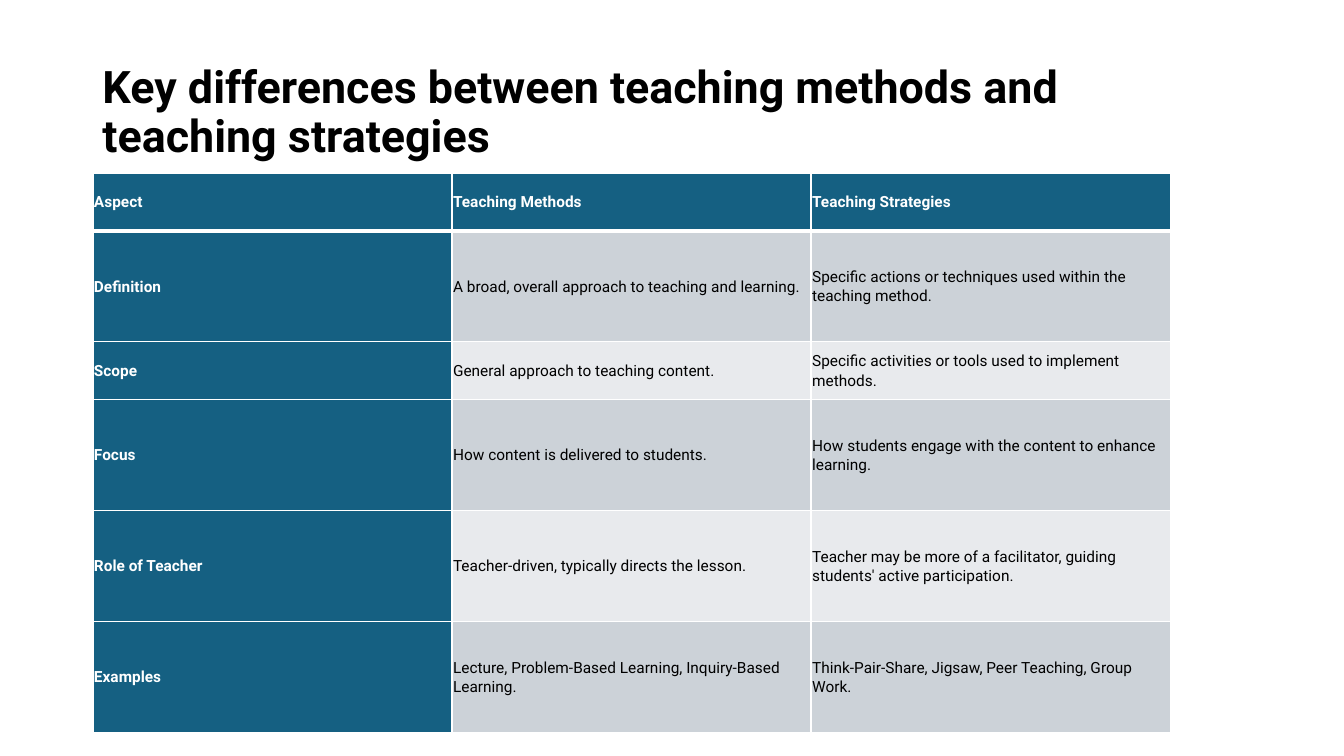
from dataclasses import dataclass

from lxml import etree
from pptx import Presentation
from pptx.dml.color import RGBColor
from pptx.enum import text
from pptx.oxml import ns
from pptx.util import Pt


@dataclass(frozen=True)
class Theme:
    font: str = "Roboto"
    ink: str = "000000"
    paper: str = "FFFFFF"
    accent: str = "156082"
    bands: tuple = ("CCD2D8", "E8EAED")
    title_size: float = 32
    cell_size: float = 11


THEME = Theme()

TITLE = "Key differences between teaching methods and teaching strategies"
COMPARISON = [
    ("Aspect", "Teaching Methods", "Teaching Strategies"),
    ("Definition",
     "A broad, overall approach to teaching and learning.",
     "Specific actions or techniques used within the teaching method."),
    ("Scope",
     "General approach to teaching content.",
     "Specific activities or tools used to implement methods."),
    ("Focus",
     "How content is delivered to students.",
     "How students engage with the content to enhance learning."),
    ("Role of Teacher",
     "Teacher-driven, typically directs the lesson.",
     "Teacher may be more of a facilitator, guiding students' active participation."),
    ("Examples",
     "Lecture, Problem-Based Learning, Inquiry-Based Learning.",
     "Think-Pair-Share, Jigsaw, Peer Teaching, Group Work."),
]
ROW_WEIGHTS = (0.57, 1.1, 0.57, 1.1, 1.1, 1.1)


def write(frame, words, *, size, color, bold=False, line_spacing=1.0, space_after=0):
    paragraph = frame.paragraphs[0]
    paragraph.alignment = text.PP_ALIGN.LEFT
    paragraph.line_spacing = line_spacing
    paragraph.space_before = Pt(0)
    paragraph.space_after = Pt(space_after)
    run = paragraph.add_run()
    run.text = words
    run.font.name = THEME.font
    run.font.size = Pt(size)
    run.font.bold = bold
    run.font.color.rgb = RGBColor.from_string(color)


def set_borders(cell, **widths):
    """Draw the sides L, R, T and B in the given widths; call before filling the cell."""
    properties = cell._tc.get_or_add_tcPr()
    for side, width in widths.items():
        line = etree.SubElement(properties, ns.qn(f"a:ln{side}"), w=str(Pt(width)))
        fill = etree.SubElement(line, ns.qn("a:solidFill"))
        etree.SubElement(fill, ns.qn("a:srgbClr"), val=THEME.paper)


def add_title(slide, left, top, width, height):
    title = slide.shapes.title
    title.left, title.top, title.width, title.height = map(Pt, (left, top, width, height))
    frame = title.text_frame
    frame.word_wrap = True
    frame.auto_size = text.MSO_AUTO_SIZE.NONE
    frame.vertical_anchor = text.MSO_ANCHOR.MIDDLE
    write(frame, TITLE, size=THEME.title_size, color=THEME.ink, bold=True, line_spacing=0.9)


def add_comparison(slide, left, top, width, height):
    columns = len(COMPARISON[0])
    table = slide.shapes.add_table(
        len(COMPARISON), columns, *map(Pt, (left, top, width, height))).table
    table.first_col = True
    for column in table.columns:
        column.width = Pt(width / columns)
    for row, weight in zip(table.rows, ROW_WEIGHTS):
        row.height = Pt(height * weight / sum(ROW_WEIGHTS))

    for r, aspect in enumerate(COMPARISON):
        for c, words in enumerate(aspect):
            cell = table.cell(r, c)
            heading = r == 0 or c == 0
            set_borders(cell, L=1, R=1, T=3 if r == 1 else 1, B=3 if r == 0 else 1)
            cell.fill.solid()
            cell.fill.fore_color.rgb = RGBColor.from_string(
                THEME.accent if heading else THEME.bands[(r - 1) % 2])
            cell.vertical_anchor = text.MSO_ANCHOR.MIDDLE
            cell.margin_left = cell.margin_right = Pt(0.75)
            cell.margin_top = cell.margin_bottom = Pt(0.75)
            write(cell.text_frame, words, size=THEME.cell_size,
                  color=THEME.paper if heading else THEME.ink, bold=heading,
                  line_spacing=1.07, space_after=8)


def main():
    deck = Presentation()
    deck.slide_width, deck.slide_height = Pt(960), Pt(540)
    slide = deck.slides.add_slide(deck.slide_layouts.get_by_name("Title Only"))
    add_title(slide, 66, 28.75, 828, 104.4)
    add_comparison(slide, 66.4, 123.7, 769.5, 399.6)
    deck.save("out.pptx")


if __name__ == "__main__":
    main()
